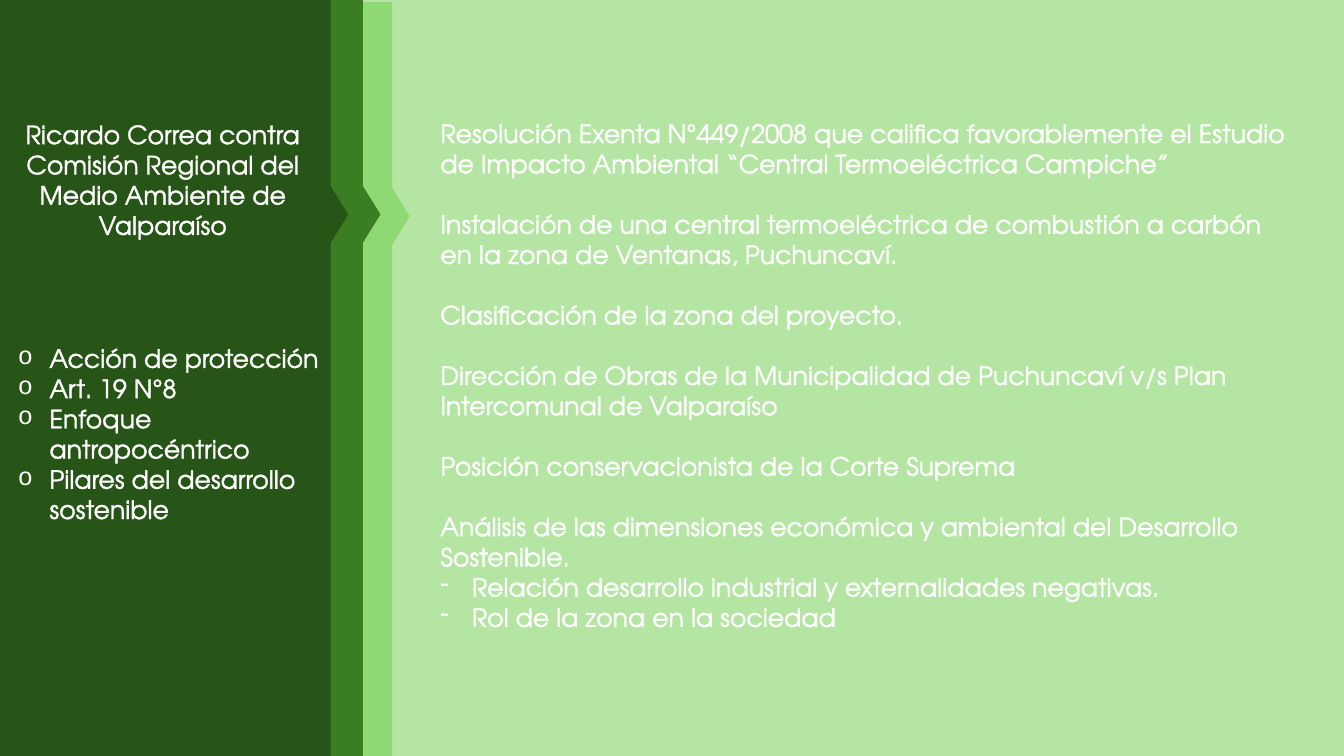
"""Build the slide on the Ricardo Correa environmental ruling."""
from dataclasses import dataclass

from lxml.etree import SubElement
from pptx import Presentation
from pptx.dml.color import RGBColor
from pptx.enum.shapes import MSO_SHAPE
from pptx.enum.text import MSO_ANCHOR, PP_ALIGN
from pptx.oxml import parse_xml
from pptx.oxml.ns import nsdecls, qn
from pptx.slide import Slide
from pptx.text.text import TextFrame, _Paragraph
from pptx.util import Pt

WHITE = RGBColor(0xFF, 0xFF, 0xFF)
PALE = RGBColor(0xB4, 0xE5, 0xA2)
LIGHT = RGBColor(0x8E, 0xD9, 0x73)
MEDIUM = RGBColor(0x3B, 0x7D, 0x23)
DARK = RGBColor(0x27, 0x54, 0x17)
FONT = "TeX Gyre Adventor"
FONT_SIZE = 18
BLANK_LINE = 21.6
BULLET_INDENT = 22.5
SLIDE_WIDTH, SLIDE_HEIGHT = 960, 540
CHEVRON_WIDTH, CHEVRON_HEIGHT = 41.76, 12.96
CHEVRON_OFFSET = 14.8


@dataclass(frozen=True)
class Box:
    left: float
    top: float
    width: float
    height: float


@dataclass(frozen=True)
class Panel:
    box: Box
    color: RGBColor


@dataclass(frozen=True)
class Line:
    text: str
    bullet: str = ""
    bullet_font: str = ""
    space_before: float = 0


PANELS = [
    Panel(Box(43.2, 1.44, 236.88, 538.56), LIGHT),
    Panel(Box(22.32, 0, 236.88, SLIDE_HEIGHT), MEDIUM),
    Panel(Box(0, 0, 236.16, SLIDE_HEIGHT), DARK),
]
CASE_NAME = Line(
    "Ricardo Correa contra Comisión Regional del Medio Ambiente de Valparaíso"
)
KEY_POINTS = [
    Line(text, "o", "Courier New")
    for text in (
        "Acción de protección",
        "Art. 19 N°8",
        "Enfoque antropocéntrico",
        "Pilares del desarrollo sostenible",
    )
]
RULING = [
    Line(
        "Resolución Exenta N°449/2008 que califica favorablemente el Estudio "
        "de Impacto Ambiental “Central Termoeléctrica Campiche”"
    ),
    Line(
        "Instalación de una central termoeléctrica de combustión a carbón "
        "en la zona de Ventanas, Puchuncaví.",
        space_before=BLANK_LINE,
    ),
    Line("Clasificación de la zona del proyecto.", space_before=BLANK_LINE),
    Line(
        "Dirección de Obras de la Municipalidad de Puchuncaví v/s Plan "
        "Intercomunal de Valparaíso",
        space_before=BLANK_LINE,
    ),
    Line("Posición conservacionista de la Corte Suprema", space_before=BLANK_LINE),
    Line(
        "Análisis de las dimensiones económica y ambiental del Desarrollo "
        "Sostenible.",
        space_before=BLANK_LINE,
    ),
    Line("Relación desarrollo industrial y externalidades negativas.", "-"),
    Line("Rol de la zona en la sociedad", "-"),
]


def add_bullet(paragraph: _Paragraph, line: Line) -> None:
    """Give the paragraph a hanging bullet."""
    properties = paragraph._p.get_or_add_pPr()
    properties.set("marL", str(Pt(BULLET_INDENT)))
    properties.set("indent", str(-Pt(BULLET_INDENT)))
    if line.bullet_font:
        SubElement(properties, qn("a:buFont")).set("typeface", line.bullet_font)
    SubElement(properties, qn("a:buChar")).set("char", line.bullet)


def write_lines(frame: TextFrame, lines: list[Line], align: PP_ALIGN) -> None:
    """Write the lines in white outlined type."""
    frame.word_wrap = True
    frame.text = "\n".join(line.text for line in lines)
    for paragraph, line in zip(frame.paragraphs, lines):
        paragraph.alignment = align
        paragraph.line_spacing = 1.0
        paragraph.space_before = Pt(line.space_before)
        if line.bullet:
            add_bullet(paragraph, line)
        for run in paragraph.runs:
            run.font.name = FONT
            run.font.size = Pt(FONT_SIZE)
            run.font.color.rgb = WHITE
            outline = parse_xml(
                f'<a:ln {nsdecls("a")} w="{Pt(1)}"><a:solidFill>'
                f'<a:srgbClr val="{WHITE}"/></a:solidFill></a:ln>'
            )
            run.font._element.insert(0, outline)


def add_solid(
    slide: Slide, kind: MSO_SHAPE, box: Box, color: RGBColor, rotation: float = 0
) -> None:
    """Add a flat shape without an outline."""
    solid = slide.shapes.add_shape(
        kind, Pt(box.left), Pt(box.top), Pt(box.width), Pt(box.height)
    )
    solid.rotation = rotation
    solid.shadow.inherit = False
    solid.fill.solid()
    solid.fill.fore_color.rgb = color
    solid.line.fill.background()


def add_panel(slide: Slide, panel: Panel) -> None:
    """Add a panel with a chevron pointing out of its right edge."""
    box = panel.box
    chevron = Box(
        box.left + box.width - CHEVRON_OFFSET,
        box.top + 146.7,
        CHEVRON_WIDTH,
        CHEVRON_HEIGHT,
    )
    add_solid(slide, MSO_SHAPE.RECTANGLE, box, panel.color)
    add_solid(slide, MSO_SHAPE.ISOSCELES_TRIANGLE, chevron, panel.color, 90)


def add_case_name(slide: Slide, box: Box) -> None:
    """Place the case name in the title, above the panels."""
    title = slide.shapes.title
    title.left, title.top = Pt(box.left), Pt(box.top)
    title.width, title.height = Pt(box.width), Pt(box.height)
    title.text_frame.vertical_anchor = MSO_ANCHOR.TOP
    write_lines(title.text_frame, [CASE_NAME], PP_ALIGN.CENTER)
    slide.shapes._spTree.append(title._element)


def add_text(slide: Slide, box: Box, lines: list[Line]) -> None:
    """Add a left-aligned block of text."""
    block = slide.shapes.add_textbox(
        Pt(box.left), Pt(box.top), Pt(box.width), Pt(box.height)
    )
    write_lines(block.text_frame, lines, PP_ALIGN.LEFT)


def main() -> None:
    """Build and save the presentation."""
    presentation = Presentation()
    presentation.slide_width = Pt(SLIDE_WIDTH)
    presentation.slide_height = Pt(SLIDE_HEIGHT)
    slide = presentation.slides.add_slide(presentation.slide_layouts[5])
    slide.background.fill.solid()
    slide.background.fill.fore_color.rgb = PALE
    for panel in PANELS:
        add_panel(slide, panel)
    add_case_name(slide, Box(9.36, 81.36, 213.84, 94.32))
    add_text(slide, Box(5.76, 241.2, 247.68, 138.24), KEY_POINTS)
    add_text(slide, Box(307.44, 80.64, 624.96, 378), RULING)
    presentation.save("out.pptx")


if __name__ == "__main__":
    main()
